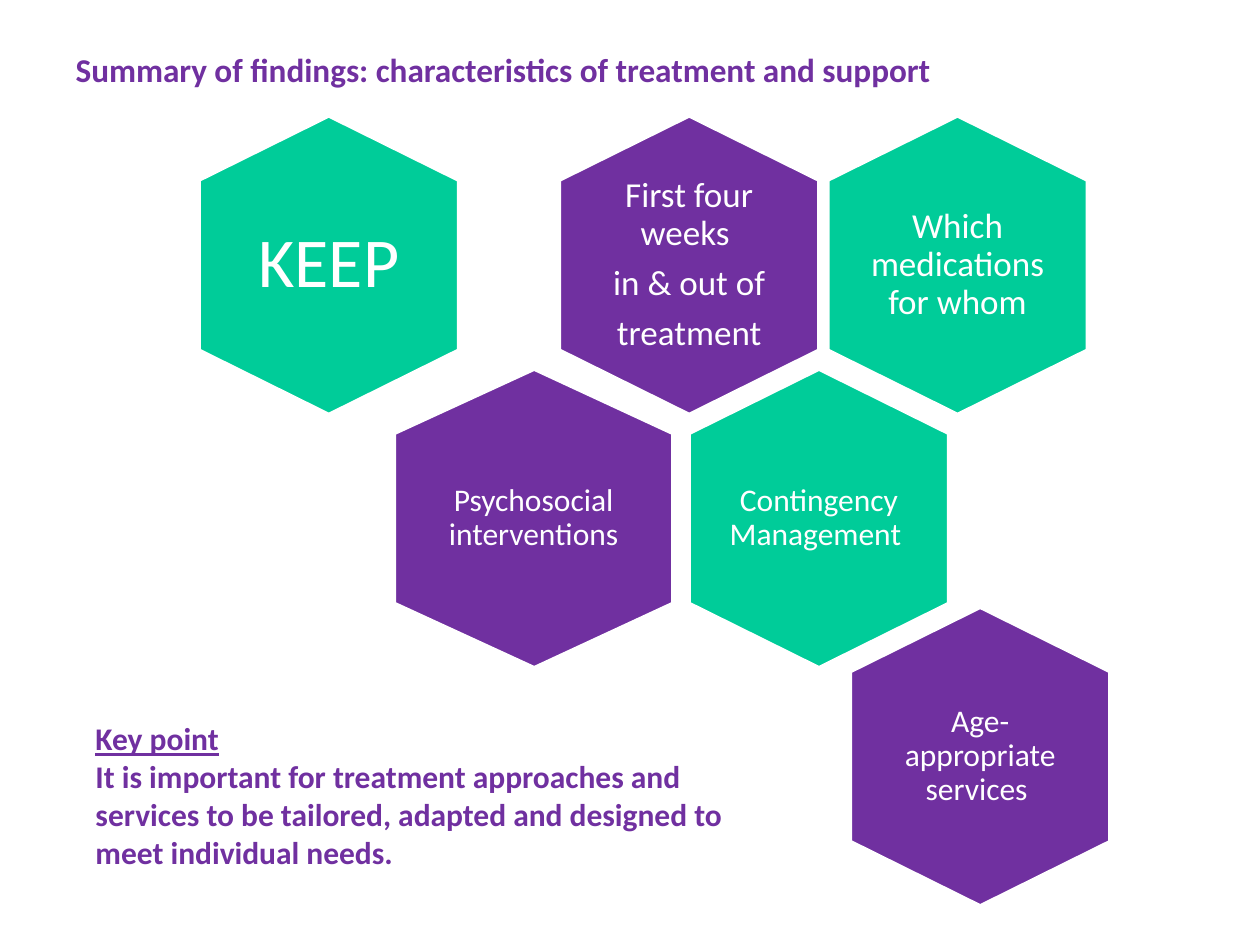
from dataclasses import dataclass

from pptx import Presentation
from pptx.dml.color import RGBColor
from pptx.enum.text import MSO_ANCHOR as Anchor, MSO_AUTO_SIZE as AutoSize, PP_ALIGN as Align
from pptx.util import Emu, Pt

EMU_PER_PX = 9144  # 100 px to the inch


@dataclass(frozen=True)
class Theme:
    font: str = "Calibri"
    purple: RGBColor = RGBColor(0x70, 0x30, 0xA0)
    green: RGBColor = RGBColor(0x00, 0xCC, 0x99)
    white: RGBColor = RGBColor(0xFF, 0xFF, 0xFF)
    title: int = 19
    body: int = 18
    large: int = 20
    keyword: int = 40


THEME = Theme()


@dataclass(frozen=True)
class Hexagon:
    left: int
    top: int
    color: RGBColor
    lines: tuple[str, ...]
    size: int = THEME.body
    width: int = 206
    inset: int = 32


HEIGHT = 237
SHOULDER = 51  # drop from the top point to the upper side corners
TOP_ROW, MIDDLE_ROW, BOTTOM_ROW = 92, 293, 482

HEXAGONS = (
    Hexagon(444, TOP_ROW, THEME.purple,
            ("First four weeks ", "in & out of", "treatment"), THEME.large, inset=40),
    Hexagon(158, TOP_ROW, THEME.green, ("KEEP",), THEME.keyword),
    Hexagon(313, MIDDLE_ROW, THEME.purple, ("Psychosocial interventions",), width=221, inset=39),
    Hexagon(547, MIDDLE_ROW, THEME.green, ("Contingency Management ",)),
    Hexagon(675, BOTTOM_ROW, THEME.purple, ("Age-appropriate services ",), inset=40),
    Hexagon(657, TOP_ROW, THEME.green, ("Which medications for whom",), THEME.large),
)


def px(length: int) -> Emu:
    return Emu(length * EMU_PER_PX)


def place(shape, left: int, top: int, width: int, height: int) -> None:
    shape.left, shape.top, shape.width, shape.height = map(px, (left, top, width, height))


def write(paragraph, text: str, *, size: int, color: RGBColor, bold: bool = False,
          underline: bool = False, align: Align = Align.LEFT,
          line_spacing: float = 1.0, space_after: float = 0) -> None:
    paragraph.alignment = align
    paragraph.line_spacing = line_spacing
    paragraph.space_after = Pt(space_after)
    run = paragraph.add_run()
    run.text = text
    font = run.font
    font.name, font.size, font.color.rgb = THEME.font, Pt(size), color
    font.bold, font.underline = bold, underline


def next_paragraph(frame, index: int):
    return frame.add_paragraph() if index else frame.paragraphs[0]


def add_title(slide, text: str) -> None:
    title = slide.shapes.title
    place(title, 50, 21, 718, 55)
    frame = title.text_frame
    frame.word_wrap = True
    frame.auto_size = AutoSize.NONE
    frame.vertical_anchor = Anchor.BOTTOM
    write(frame.paragraphs[0], text, size=THEME.title, color=THEME.purple, bold=True)


def add_hexagon(slide, hexagon: Hexagon) -> None:
    left, top = hexagon.left, hexagon.top
    right, bottom = left + hexagon.width, top + HEIGHT
    middle = left + hexagon.width / 2
    upper, lower = top + SHOULDER, bottom - SHOULDER
    builder = slide.shapes.build_freeform(middle, top, scale=EMU_PER_PX)
    builder.add_line_segments(
        [(right, upper), (right, lower), (middle, bottom), (left, lower), (left, upper)])
    shape = builder.convert_to_shape()
    shape.shadow.inherit = False
    shape.fill.solid()
    shape.fill.fore_color.rgb = hexagon.color
    shape.line.color.rgb = THEME.white
    shape.line.width = Pt(2)

    frame = shape.text_frame
    frame.word_wrap = True
    frame.vertical_anchor = Anchor.MIDDLE
    frame.margin_left = frame.margin_right = px(hexagon.inset)
    frame.margin_top = frame.margin_bottom = px(hexagon.inset + 5)
    for index, line in enumerate(hexagon.lines):
        write(next_paragraph(frame, index), line, size=hexagon.size, color=THEME.white,
              align=Align.CENTER, line_spacing=0.9, space_after=0.35 * hexagon.size)


def add_key_point(slide, heading: str, message: str) -> None:
    box = slide.shapes.add_textbox(px(66), px(566), px(523), px(131))
    frame = box.text_frame
    frame.word_wrap = True
    frame.auto_size = AutoSize.SHAPE_TO_FIT_TEXT
    for index, text in enumerate((heading, message)):
        write(next_paragraph(frame, index), text, size=THEME.body, color=THEME.purple,
              bold=True, underline=index == 0)


def main() -> None:
    presentation = Presentation()
    presentation.slide_width, presentation.slide_height = px(1000), px(750)
    slide = presentation.slides.add_slide(presentation.slide_layouts.get_by_name("Title Only"))
    add_title(slide, "Summary of findings: characteristics of treatment and support")
    for hexagon in HEXAGONS:
        add_hexagon(slide, hexagon)
    add_key_point(
        slide, "Key point",
        "It is important for treatment approaches and services to be tailored, "
        "adapted and designed to meet individual needs.")
    presentation.save("out.pptx")


if __name__ == "__main__":
    main()
